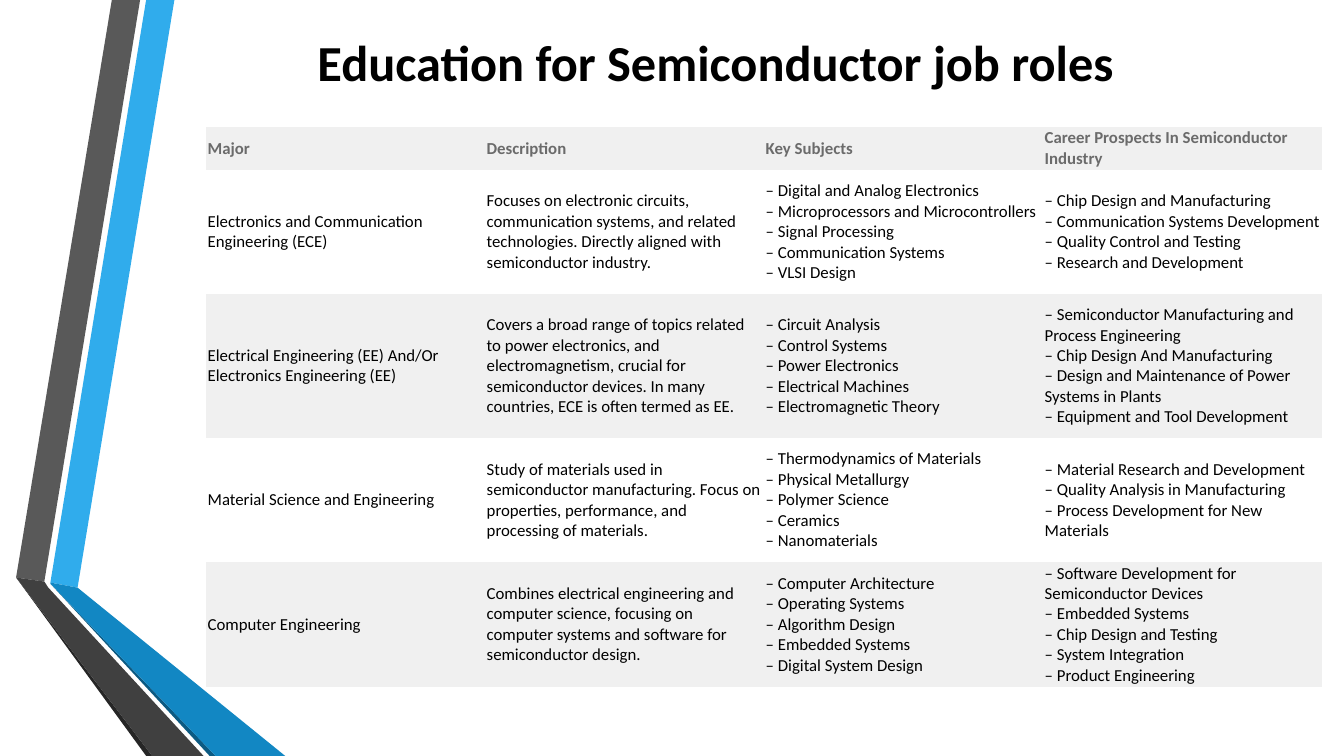
"""Build a slide with a table of degree majors for semiconductor job roles."""
import pptx
import pptx.dml.color
import pptx.enum.text
import pptx.util

Inches = pptx.util.Inches
RGBColor = pptx.dml.color.RGBColor

BLACK = RGBColor(0x00, 0x00, 0x00)
WHITE = RGBColor(0xFF, 0xFF, 0xFF)
BAND_GREY = RGBColor(0xF0, 0xF0, 0xF0)
HEADER_GREY = RGBColor(0x6B, 0x6B, 0x6B)
SKY_BLUE = RGBColor(0x30, 0xAC, 0xEC)
MID_BLUE = RGBColor(0x12, 0x87, 0xC3)
DEEP_BLUE = RGBColor(0x0C, 0x5A, 0x82)
GREY = RGBColor(0x59, 0x59, 0x59)
DARK_GREY = RGBColor(0x40, 0x40, 0x40)
CHARCOAL = RGBColor(0x26, 0x26, 0x26)

FONT = "Calibri"
NO_STYLE_NO_GRID = "{2D5ABB26-0587-4C30-8999-92F81FD0307C}"

RIBBONS = [
    (SKY_BLUE, [(0.5, 5.78), (0.77, 5.83), (1.73, 0), (1.45, 0)]),
    (GREY, [(1.39, 0), (1.11, 0), (0.16, 5.73), (0.44, 5.77)]),
    (CHARCOAL, [(0.16, 5.73), (1.45, 7.5), (1.51, 7.5)]),
    (DEEP_BLUE, [(0.5, 5.79), (2.08, 7.5), (2.14, 7.5)]),
    (MID_BLUE, [(0.5, 5.78), (0.5, 5.79), (2.14, 7.5), (2.83, 7.5), (0.77, 5.83)]),
    (DARK_GREY, [(0.16, 5.73), (1.51, 7.5), (2.02, 7.5), (0.48, 5.83), (0.44, 5.77)]),
]

ROW_HEIGHTS = [0.42, 1.23, 1.43, 1.23, 1.23]
MAJORS = [
    ("Major", "Description", "Key Subjects",
     "Career Prospects In Semiconductor Industry"),
    ("Electronics and Communication Engineering (ECE)",
     "Focuses on electronic circuits, communication systems, and related "
     "technologies. Directly aligned with semiconductor industry.",
     ["Digital and Analog Electronics", "Microprocessors and Microcontrollers",
      "Signal Processing", "Communication Systems", "VLSI Design"],
     ["Chip Design and Manufacturing", "Communication Systems Development",
      "Quality Control and Testing", "Research and Development"]),
    ("Electrical Engineering (EE) And/Or Electronics Engineering (EE)",
     "Covers a broad range of topics related to power electronics, and "
     "electromagnetism, crucial for semiconductor devices. In many countries, "
     "ECE is often termed as EE.",
     ["Circuit Analysis", "Control Systems", "Power Electronics",
      "Electrical Machines", "Electromagnetic Theory"],
     ["Semiconductor Manufacturing and Process Engineering",
      "Chip Design And Manufacturing",
      "Design and Maintenance of Power Systems in Plants",
      "Equipment and Tool Development"]),
    ("Material Science and Engineering",
     "Study of materials used in semiconductor manufacturing. Focus on "
     "properties, performance, and processing of materials.",
     ["Thermodynamics of Materials", "Physical Metallurgy", "Polymer Science",
      "Ceramics", "Nanomaterials"],
     ["Material Research and Development", "Quality Analysis in Manufacturing",
      "Process Development for New Materials"]),
    ("Computer Engineering",
     "Combines electrical engineering and computer science, focusing on "
     "computer systems and software for semiconductor design.",
     ["Computer Architecture", "Operating Systems", "Algorithm Design",
      "Embedded Systems", "Digital System Design"],
     ["Software Development for Semiconductor Devices", "Embedded Systems",
      "Chip Design and Testing", "System Integration", "Product Engineering"]),
]


def format_runs(paragraph, size, color, bold):
    """Apply one font setting to every run of a paragraph."""
    for run in paragraph.runs:
        run.font.name = FONT
        run.font.size = pptx.util.Pt(size)
        run.font.bold = bold
        run.font.color.rgb = color


def add_ribbon(slide, color, corners):
    """Draw one filled polygon of the folded ribbon."""
    points = [(Inches(x), Inches(y)) for x, y in corners]
    builder = slide.shapes.build_freeform(*points[0])
    builder.add_line_segments(points[1:], close=True)
    ribbon = builder.convert_to_shape()
    ribbon.fill.solid()
    ribbon.fill.fore_color.rgb = color
    ribbon.line.fill.background()
    ribbon.shadow.inherit = False


def set_title(slide, text):
    """Place and format the title placeholder."""
    title = slide.shapes.title
    title.left, title.top = Inches(1.62), Inches(0.31)
    title.width, title.height = Inches(10.96), Inches(0.59)
    frame = title.text_frame
    frame.text = text
    frame.auto_size = pptx.enum.text.MSO_AUTO_SIZE.NONE
    frame.vertical_anchor = pptx.enum.text.MSO_ANCHOR.MIDDLE
    frame.margin_top = frame.margin_bottom = 0
    frame.paragraphs[0].alignment = pptx.enum.text.PP_ALIGN.CENTER
    format_runs(frame.paragraphs[0], 36, BLACK, True)


def fill_cell(cell, content, fill, color, bold):
    """Write plain text or a dashed list into a table cell."""
    if isinstance(content, list):
        content = "\n".join(f"– {item}" for item in content)
    cell.fill.solid()
    cell.fill.fore_color.rgb = fill
    cell.vertical_anchor = pptx.enum.text.MSO_ANCHOR.MIDDLE
    cell.margin_left = cell.margin_right = Inches(0.02)
    cell.margin_top = cell.margin_bottom = Inches(0.01)
    paragraph = cell.text_frame.paragraphs[0]
    paragraph.text = content
    format_runs(paragraph, 12, color, bold)


def add_majors_table(slide):
    """Add the table of majors with alternating row fills."""
    frame = slide.shapes.add_table(
        len(MAJORS), len(MAJORS[0]), Inches(2.04), Inches(1.26),
        Inches(11.07), Inches(sum(ROW_HEIGHTS)))
    table = frame.table
    table.horz_banding = False
    style = table._tbl.tblPr.find(pptx.oxml.ns.qn("a:tableStyleId"))
    style.text = NO_STYLE_NO_GRID
    for row_index, (height, major) in enumerate(zip(ROW_HEIGHTS, MAJORS)):
        table.rows[row_index].height = Inches(height)
        is_header = row_index == 0
        fill = WHITE if row_index % 2 else BAND_GREY
        color = HEADER_GREY if is_header else BLACK
        for column_index, content in enumerate(major):
            fill_cell(table.cell(row_index, column_index), content, fill, color, is_header)


def main():
    """Assemble the slide and save it."""
    deck = pptx.Presentation()
    deck.slide_width, deck.slide_height = Inches(13.33), Inches(7.5)
    slide = deck.slides.add_slide(deck.slide_layouts.get_by_name("Title Only"))
    for color, corners in RIBBONS:
        add_ribbon(slide, color, corners)
    set_title(slide, "Education for Semiconductor job roles")
    add_majors_table(slide)
    deck.save("out.pptx")


if __name__ == "__main__":
    main()
